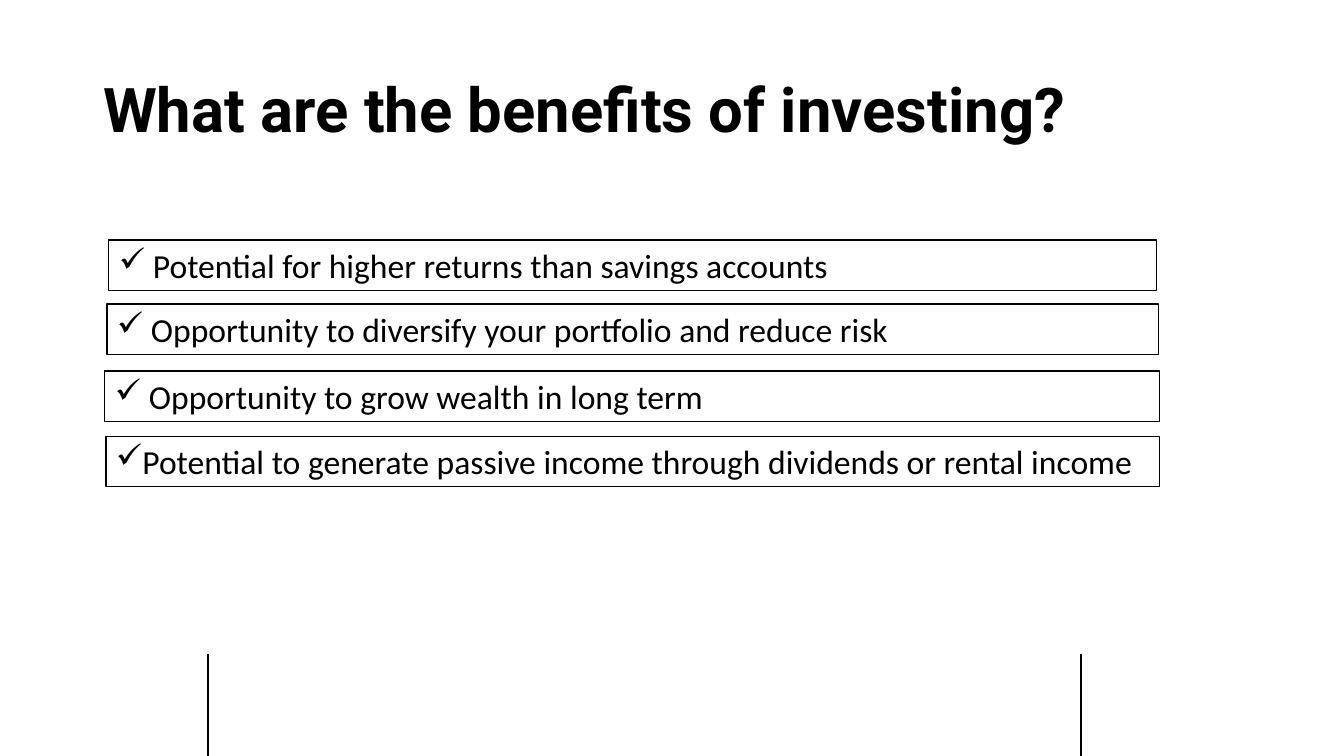
import dataclasses

import lxml.etree
import pptx
import pptx.dml.color
import pptx.enum.shapes
import pptx.enum.text
import pptx.oxml.ns
import pptx.slide
import pptx.text.text
import pptx.util

BLACK = pptx.dml.color.RGBColor(0x00, 0x00, 0x00)
WHITE = pptx.dml.color.RGBColor(0xFF, 0xFF, 0xFF)
EMU_PER_PX = 914400 / 100.8
SLIDE_WIDTH, SLIDE_HEIGHT = 1344, 756
BENEFIT_HEIGHT = 51
RULE_TOP = 654


@dataclasses.dataclass(frozen=True)
class Benefit:
    left: int
    top: int
    width: int
    text: str


BENEFITS = [
    Benefit(109, 240, 1048, " Potential for higher returns than savings accounts"),
    Benefit(107, 304, 1052, " Opportunity to diversify your portfolio and reduce risk"),
    Benefit(105, 371, 1055, " Opportunity to grow wealth in long term"),
    Benefit(106, 436, 1054,
            "Potential to generate passive income through dividends or rental income"),
]
RULE_POSITIONS = [208, 1081]


def px(length: int) -> pptx.util.Emu:
    return pptx.util.Emu(round(length * EMU_PER_PX))


def add_run(paragraph: pptx.text.text._Paragraph, text: str, font: str,
            size: int, bold: bool = False) -> None:
    run = paragraph.add_run()
    run.text = text
    run.font.name = font
    run.font.size = pptx.util.Pt(size)
    run.font.bold = bold
    run.font.color.rgb = BLACK


def add_check_bullet(paragraph: pptx.text.text._Paragraph) -> None:
    properties = paragraph._p.get_or_add_pPr()
    properties.set("marL", "0")
    properties.set("indent", "0")
    bullet = lxml.etree.SubElement(properties, pptx.oxml.ns.qn("a:buChar"))
    bullet.set("char", "✓")


def add_rule(slide: pptx.slide.Slide, x: int) -> None:
    rule = slide.shapes.add_connector(
        pptx.enum.shapes.MSO_CONNECTOR.STRAIGHT,
        px(x), px(RULE_TOP), px(x), px(SLIDE_HEIGHT))
    rule.line.color.rgb = BLACK
    rule.line.width = pptx.util.Pt(1)
    lxml.etree.SubElement(rule._element.spPr, pptx.oxml.ns.qn("a:effectLst"))


def add_benefit(slide: pptx.slide.Slide, benefit: Benefit) -> None:
    shape = slide.shapes.add_shape(
        pptx.enum.shapes.MSO_SHAPE.RECTANGLE, px(benefit.left), px(benefit.top),
        px(benefit.width), px(BENEFIT_HEIGHT))
    shape.shadow.inherit = False
    shape.fill.background()
    shape.line.color.rgb = BLACK
    shape.line.width = pptx.util.Pt(0.75)
    frame = shape.text_frame
    frame.word_wrap = True
    frame.auto_size = pptx.enum.text.MSO_AUTO_SIZE.SHAPE_TO_FIT_TEXT
    frame.vertical_anchor = pptx.enum.text.MSO_ANCHOR.TOP
    paragraph = frame.paragraphs[0]
    paragraph.alignment = pptx.enum.text.PP_ALIGN.LEFT
    add_check_bullet(paragraph)
    add_run(paragraph, benefit.text, "Calibri", 24)


def set_title(slide: pptx.slide.Slide, text: str) -> None:
    title = slide.shapes.title
    title.left, title.top = px(93), px(40)
    title.width, title.height = px(1159), px(146)
    frame = title.text_frame
    frame.word_wrap = True
    frame.auto_size = pptx.enum.text.MSO_AUTO_SIZE.NONE
    frame.vertical_anchor = pptx.enum.text.MSO_ANCHOR.MIDDLE
    paragraph = frame.paragraphs[0]
    paragraph.alignment = pptx.enum.text.PP_ALIGN.LEFT
    paragraph.line_spacing = 0.9
    add_run(paragraph, text, "Roboto", 44, bold=True)


def main() -> None:
    presentation = pptx.Presentation()
    presentation.slide_width = px(SLIDE_WIDTH)
    presentation.slide_height = px(SLIDE_HEIGHT)
    slide = presentation.slides.add_slide(presentation.slide_layouts.get_by_name("Title Only"))
    slide.background.fill.solid()
    slide.background.fill.fore_color.rgb = WHITE

    # Title
    set_title(slide, "What are the benefits of investing?")

    # Vertical rules at the foot
    for x in RULE_POSITIONS:
        add_rule(slide, x)

    # Boxed benefits
    for benefit in BENEFITS:
        add_benefit(slide, benefit)

    presentation.save("out.pptx")


if __name__ == "__main__":
    main()
